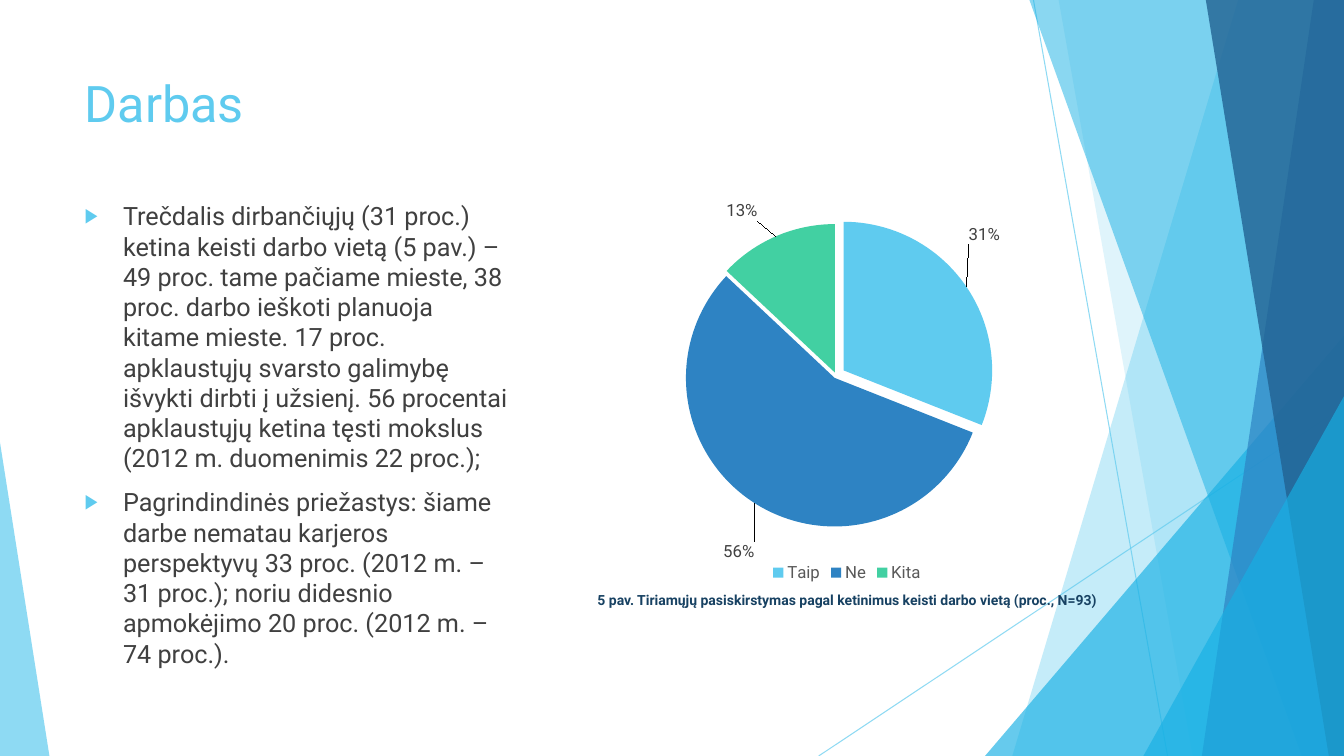
from copy import deepcopy

from lxml import etree
from pptx import Presentation
from pptx.chart.data import CategoryChartData
from pptx.dml.color import RGBColor
from pptx.enum.chart import XL_CHART_TYPE, XL_LABEL_POSITION, XL_LEGEND_POSITION
from pptx.enum.shapes import MSO_CONNECTOR, MSO_SHAPE
from pptx.enum.text import MSO_ANCHOR, MSO_AUTO_SIZE, PP_ALIGN
from pptx.oxml import parse_xml
from pptx.oxml.ns import nsdecls, qn
from pptx.util import Inches, Pt

PIE = XL_CHART_TYPE.PIE
OUTSIDE = XL_LABEL_POSITION.OUTSIDE_END
LEGEND_BOTTOM = XL_LEGEND_POSITION.BOTTOM
STRAIGHT = MSO_CONNECTOR.STRAIGHT
TRIANGLE = MSO_SHAPE.ISOSCELES_TRIANGLE
TOP = MSO_ANCHOR.TOP
NO_FIT = MSO_AUTO_SIZE.NONE
LEFT, CENTER = PP_ALIGN.LEFT, PP_ALIGN.CENTER

# Content
FONT = "Roboto"
SKY, BLUE, GREEN = "5FCBEF", "2E83C3", "42D0A2"
CYAN, NAVY, TEXT = "17B0E4", "226292", "404040"
TITLE = "Darbas"
BULLETS = [
    "Trečdalis dirbančiųjų (31 proc.) ketina keisti darbo vietą (5 pav.) – 49 proc. tame "
    "pačiame mieste, 38 proc. darbo ieškoti planuoja kitame mieste. 17 proc. apklaustųjų "
    "svarsto galimybę išvykti dirbti į užsienį. 56 procentai apklaustųjų ketina tęsti "
    "mokslus (2012 m. duomenimis 22 proc.);",
    "Pagrindindinės priežastys: šiame darbe nematau karjeros perspektyvų 33 proc. "
    "(2012 m. – 31 proc.); noriu didesnio apmokėjimo 20 proc. (2012 m. – 74 proc.).",
]
CAPTION = "5 pav. Tiriamųjų pasiskirstymas pagal ketinimus keisti darbo vietą (proc., N=93)"
# name, value, colour, explosion %, label shift as shares of the chart
SLICES = [
    ("Taip", 31, SKY, 6, (-0.005, -0.1)),
    ("Ne", 56, BLUE, 2, (0.005, 0.085)),
    ("Kita", 13, GREEN, 2, (-0.03, -0.025)),
]
PIE_AREA = {"x": 0.2, "y": 0.08, "w": 0.56, "h": 0.76}

# Decoration, back to front
WIDTH, HEIGHT = 13.33, 7.5
LINES = [(10.25, 0, 11.58, HEIGHT), (WIDTH, 4.03, 8.12, HEIGHT)]
# band: top-left x, bottom-left x, colour, opacity; each runs to the right edge
# corner: left, top, width, apex position, colour, opacity; each stands on the bottom edge
DECORATION = [
    ("band", 12.28, 10.04, SKY, 36),
    ("band", 10.5, 11.83, SKY, 20),
    ("corner", 9.77, 3.33, 3.56, 1, CYAN, 66),
    ("band", 10.21, 12.91, CYAN, 50),
    ("band", 13.03, 11.92, BLUE, 70),
    ("band", 11.96, 13.18, NAVY, 80),
    ("corner", 11.34, 3.93, 1.99, 1, CYAN, 66),
    ("corner", 0, 4.39, 0.49, 0, SKY, 70),
]


def rgb(value):
    return RGBColor.from_string(value)


def style(font, size, color, bold=False):
    font.name, font.size, font.bold = FONT, Pt(size), bold
    font.color.rgb = rgb(color)


def set_opacity(fill_owner, percent):
    color = next(fill_owner.iter(qn("a:srgbClr")))
    etree.SubElement(color, qn("a:alpha")).set("val", str(percent * 1000))


def paint(shape, color, percent):
    shape.shadow.inherit = False
    shape.fill.solid()
    shape.fill.fore_color.rgb = rgb(color)
    shape.line.fill.background()
    set_opacity(shape._element.spPr, percent)


def add_band(page, top_x, bottom_x, color, percent):
    outline = page.shapes.build_freeform(Inches(top_x), 0)
    corners = [(WIDTH, 0), (WIDTH, HEIGHT), (bottom_x, HEIGHT)]
    outline.add_line_segments([(Inches(x), Inches(y)) for x, y in corners], close=True)
    paint(outline.convert_to_shape(), color, percent)


def add_corner(page, left, top, width, apex, color, percent):
    shape = page.shapes.add_shape(
        TRIANGLE, Inches(left), Inches(top), Inches(width), Inches(HEIGHT - top))
    shape.adjustments[0] = apex
    paint(shape, color, percent)


def add_decoration(page):
    for ends in LINES:
        line = page.shapes.add_connector(STRAIGHT, *map(Inches, ends))
        line.line.width = Pt(0.75)
        line.line.color.rgb = rgb(SKY)
        set_opacity(line._element.spPr, 70)
        etree.SubElement(line._element.spPr, qn("a:effectLst"))
    makers = {"band": add_band, "corner": add_corner}
    for kind, *details in DECORATION:
        makers[kind](page, *details)


def place(box, left, top, width, height):
    box.left, box.top = Inches(left), Inches(top)
    box.width, box.height = Inches(width), Inches(height)
    box.text_frame.auto_size = NO_FIT
    box.text_frame.vertical_anchor = TOP
    box.text_frame.word_wrap = True


def add_bullet(para):
    props = para._p.get_or_add_pPr()
    props.set("marL", str(Inches(0.38)))
    props.set("indent", str(-Inches(0.38)))
    color = etree.SubElement(props, qn("a:buClr"))
    etree.SubElement(color, qn("a:srgbClr")).set("val", SKY)
    etree.SubElement(props, qn("a:buSzPct")).set("val", "80000")
    etree.SubElement(props, qn("a:buChar")).set("char", "▶")


def fill_text(page):
    title, body = page.placeholders
    for box in (title, body):
        page.shapes._spTree.append(box._element)  # in front of the decoration
    place(title, 0.74, 0.67, 9.4, 1.44)
    title.text_frame.text = TITLE
    heading = title.text_frame.paragraphs[0]
    heading.alignment = LEFT
    style(heading.font, 36, SKY)

    place(body, 0.74, 1.94, 4.43, 4.67)
    body.text_frame.text = "\n".join(BULLETS)
    for para in body.text_frame.paragraphs:
        para.space_before = Pt(10)
        add_bullet(para)
        style(para.font, 18, TEXT)


def manual_layout(sizes, inner=False):
    target = '<c:layoutTarget val="inner"/>' if inner else ""
    modes = '<c:xMode val="edge"/><c:yMode val="edge"/>' if inner else ""
    values = "".join(f'<c:{key} val="{size}"/>' for key, size in sizes.items())
    return (f'<c:layout {nsdecls("c")}><c:manualLayout>{target}{modes}{values}'
            "</c:manualLayout></c:layout>")


def add_pie(page):
    data = CategoryChartData()
    data.categories = [row[0] for row in SLICES]
    data.add_series("Series 1", [row[1] for row in SLICES])
    chart = page.shapes.add_chart(
        PIE, Inches(5.75), Inches(1.94), Inches(5.3), Inches(3.88), data).chart
    chart.has_title = False
    style(chart.font, 10, "000000")
    chart.has_legend = True
    chart.legend.position = LEGEND_BOTTOM
    chart.legend.include_in_layout = False
    style(chart.legend.font, 12, "595959")

    plot = chart.plots[0]
    plot.vary_by_categories = True
    area = plot._element.getparent()
    for old in area.findall(qn("c:layout")):
        area.remove(old)
    area.insert(0, parse_xml(manual_layout(PIE_AREA, inner=True)))

    series = plot.series[0]
    labels = series.data_labels
    labels.show_percentage, labels.show_value = True, False
    labels.number_format, labels.number_format_is_linked = "0%", False
    labels.position = OUTSIDE
    style(labels.font, 12, TEXT)
    shared = [part for part in labels._element if part.tag != qn("c:showLeaderLines")]
    for index, (_, _, color, explosion, shift) in enumerate(SLICES):
        fill = series.points[index].format.fill
        fill.solid()
        fill.fore_color.rgb = rgb(color)
        slice_xml = series._element.findall(qn("c:dPt"))[index]
        slice_xml.insert(1, parse_xml(f'<c:explosion {nsdecls("c")} val="{explosion}"/>'))
        label = parse_xml(f'<c:dLbl {nsdecls("c")}><c:idx val="{index}"/></c:dLbl>')
        label.append(parse_xml(manual_layout(dict(zip("xy", shift)))))
        label.extend(deepcopy(shared))
        labels._element.insert(index, label)


def add_caption(page):
    box = page.shapes.add_textbox(Inches(5.67), Inches(5.82), Inches(5.46), Inches(0.27))
    box.text_frame.word_wrap = False
    box.text_frame.text = CAPTION
    para = box.text_frame.paragraphs[0]
    para.alignment = CENTER
    style(para.font, 10, "174162", bold=True)


def main():
    deck = Presentation()
    deck.slide_width, deck.slide_height = Inches(WIDTH), Inches(HEIGHT)
    page = deck.slides.add_slide(deck.slide_layouts[1])
    add_decoration(page)
    fill_text(page)
    add_pie(page)
    add_caption(page)
    deck.save("out.pptx")


if __name__ == "__main__":
    main()
